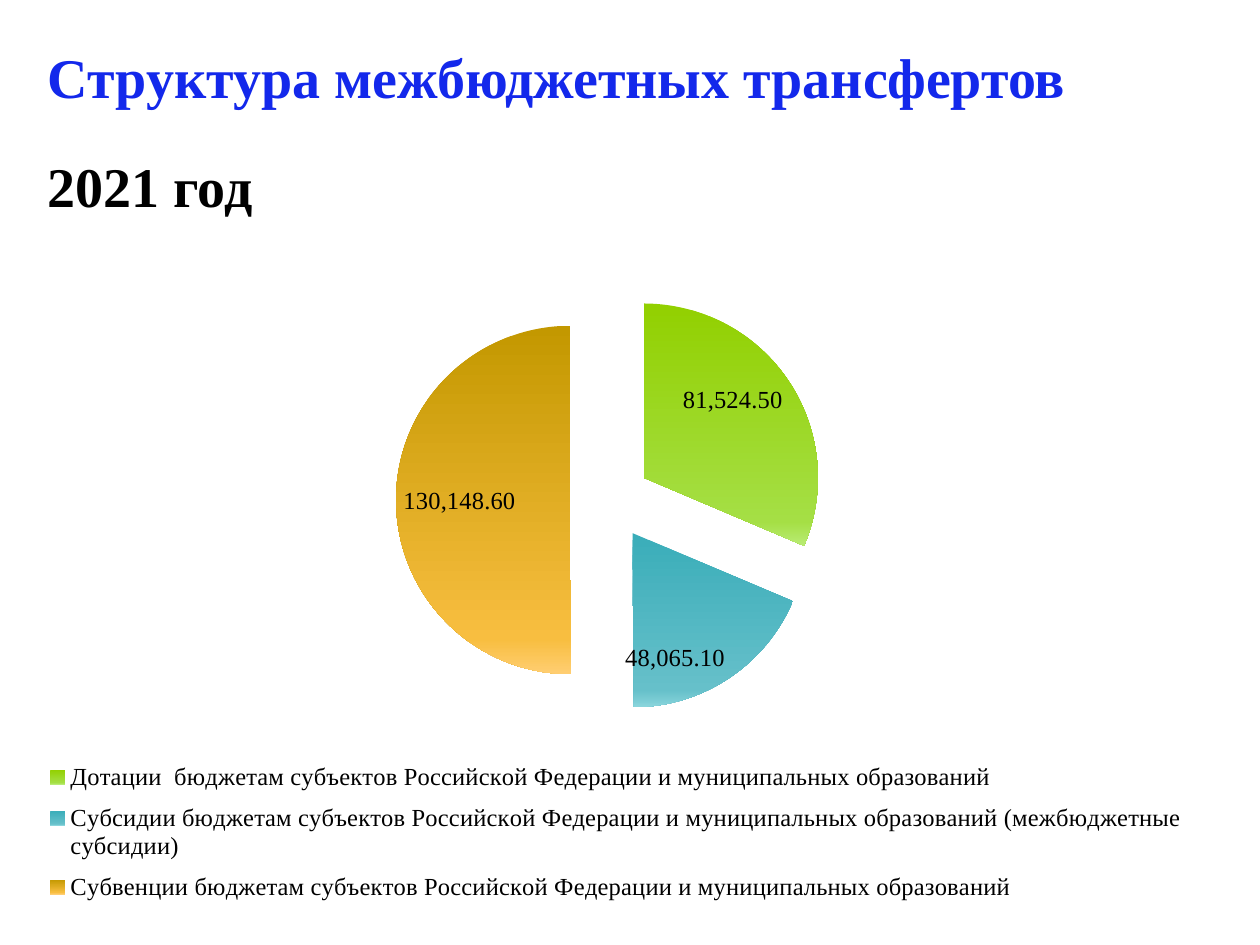
from copy import deepcopy

from lxml.etree import SubElement
from pptx import Presentation
from pptx.chart.data import CategoryChartData
from pptx.dml.color import RGBColor
from pptx.enum.chart import XL_CHART_TYPE, XL_LABEL_POSITION, XL_LEGEND_POSITION
from pptx.enum.text import MSO_ANCHOR, PP_ALIGN
from pptx.oxml.ns import qn
from pptx.util import Pt

FONT = "Times New Roman"
BLUE = RGBColor(0x13, 0x28, 0xEB)
BLACK = RGBColor(0, 0, 0)

TITLE = "Структура межбюджетных трансфертов"
YEAR = "2021 год"
# Transfer, amount, gradient from top to bottom
TRANSFERS = [
    ("Дотации  бюджетам субъектов Российской Федерации и муниципальных образований",
     81524.5, ("92D000", "A5DF45", "B9EC74")),
    ("Субсидии бюджетам субъектов Российской Федерации и муниципальных образований "
     "(межбюджетные субсидии)",
     48065.1, ("3AADB9", "66C0CA", "8AD5DC")),
    ("Субвенции бюджетам субъектов Российской Федерации и муниципальных образований",
     130148.6, ("C39800", "F8BE40", "FFCE72")),
]
STOP_POSITIONS = (0, 0.9, 1)
EXPLOSION = 23
PLOT_AREA = (0.01, 0.1, 0.98, 0.6)
LEGEND_AREA = (0.02, 0.75, 0.97, 0.23)


def write_heading(shape, text, color, box):
    shape.left, shape.top, shape.width, shape.height = map(Pt, box)
    frame = shape.text_frame
    frame.word_wrap = True
    frame.vertical_anchor = MSO_ANCHOR.TOP
    paragraph = frame.paragraphs[0]
    paragraph.alignment = PP_ALIGN.LEFT
    run = paragraph.add_run()
    run.text = text
    run.font.name = FONT
    run.font.size = Pt(32)
    run.font.bold = True
    run.font.color.rgb = color


def set_layout(layout, area, inner=False):
    """Place a chart part by fractions of the chart: left, top, width, height."""
    manual = SubElement(layout, qn("c:manualLayout"))
    settings = [("layoutTarget", "inner")] if inner else []
    settings += [("xMode", "edge"), ("yMode", "edge")]
    settings += zip("xywh", map(str, area))
    for tag, value in settings:
        SubElement(manual, qn(f"c:{tag}")).set("val", value)


def fill_slice(point, colors):
    fill = point.format.fill
    fill.gradient()
    fill.gradient_angle = 270
    stop_list = point._element.xpath(f"c:dPt[c:idx/@val='{point._idx}']//a:gsLst")[0] \
        if hasattr(point, "_element") else point._ser.xpath(
            f"c:dPt[c:idx/@val='{point._idx}']//a:gsLst")[0]
    stop_list.append(deepcopy(stop_list[-1]))
    fill.gradient()
    for stop, position, color in zip(fill.gradient_stops, STOP_POSITIONS, colors):
        stop.position = position
        stop.color.rgb = RGBColor.from_string(color)


def add_pie(slide):
    data = CategoryChartData(number_format="#,##0.00")
    data.categories = [name for name, _, _ in TRANSFERS]
    data.add_series("Series 1", [amount for _, amount, _ in TRANSFERS])
    chart = slide.shapes.add_chart(
        XL_CHART_TYPE.PIE, Pt(8.6), Pt(122.4), Pt(680.4), Pt(408.2), data).chart
    chart.has_title = False
    chart.font.name = FONT
    chart.font.size = Pt(14)
    chart.font.color.rgb = BLACK

    chart.has_legend = True
    legend = chart.legend
    legend.position = XL_LEGEND_POSITION.BOTTOM
    legend.include_in_layout = False
    set_layout(legend._element.get_or_add_layout(), LEGEND_AREA)

    plot_area = chart._chartSpace.chart.plotArea
    layout = plot_area.find(qn("c:layout"))
    if layout is None:
        layout = SubElement(plot_area, qn("c:layout"))
        plot_area.insert(0, layout)
    set_layout(layout, PLOT_AREA, inner=True)

    plot = chart.plots[0]
    plot.vary_by_categories = True
    series = plot.series[0]
    for index, (_, _, colors) in enumerate(TRANSFERS):
        fill_slice(series.points[index], colors)
    explosion = series._element.makeelement(qn("c:explosion"), {"val": str(EXPLOSION)})
    series._element.find(qn("c:dPt")).addprevious(explosion)
    for slice_element in series._element.findall(qn("c:dPt")):
        slice_element.find(qn("c:spPr")).addprevious(deepcopy(explosion))

    labels = series.data_labels
    labels.show_value = True
    labels.number_format = "#,##0.00"
    labels.number_format_is_linked = False
    labels.position = XL_LABEL_POSITION.INSIDE_END


def main():
    presentation = Presentation()
    presentation.slide_width, presentation.slide_height = Pt(720), Pt(540)
    slide = presentation.slides.add_slide(presentation.slide_layouts[5])
    add_pie(slide)
    write_heading(slide.shapes.title, TITLE, BLUE, (20.2, 20.9, 663.1, 90.7))
    year_box = slide.shapes.add_textbox(0, 0, 0, 0)
    write_heading(year_box, YEAR, BLACK, (20.2, 82.8, 209.5, 46.1))
    presentation.save("out.pptx")


if __name__ == "__main__":
    main()
